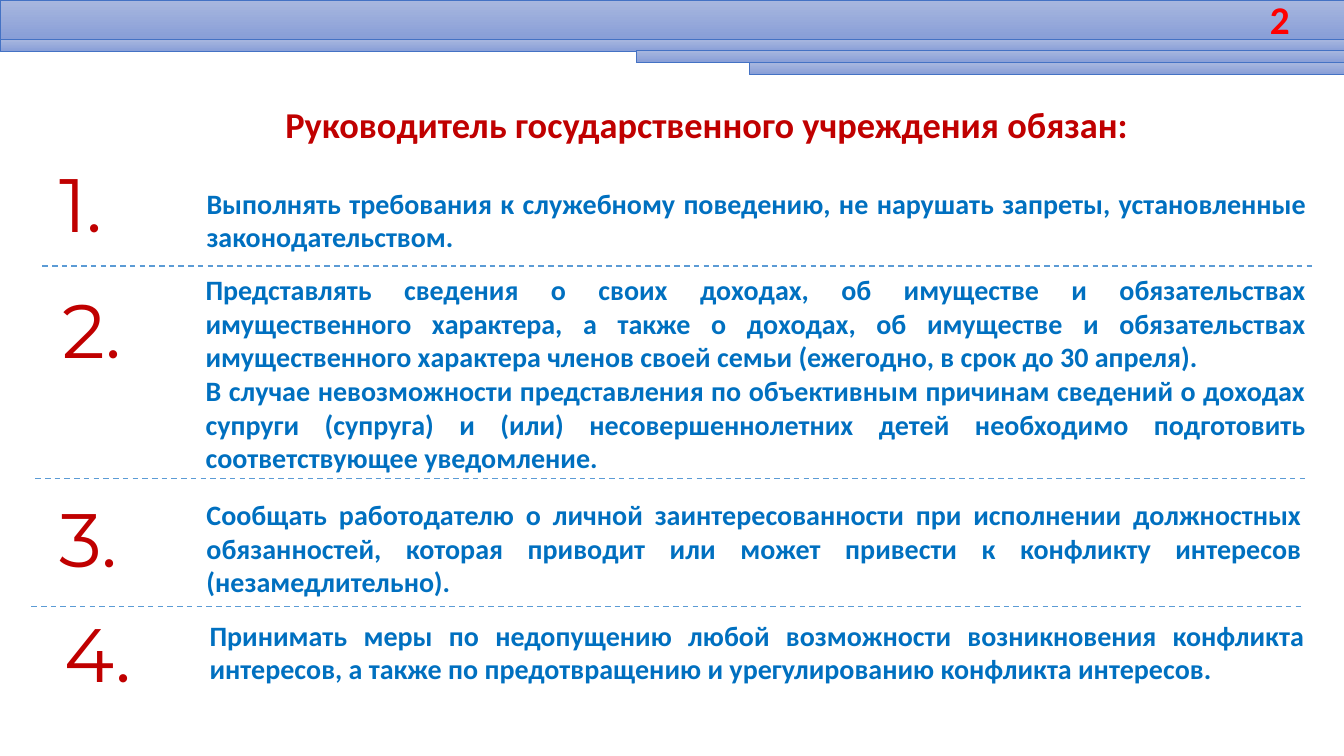
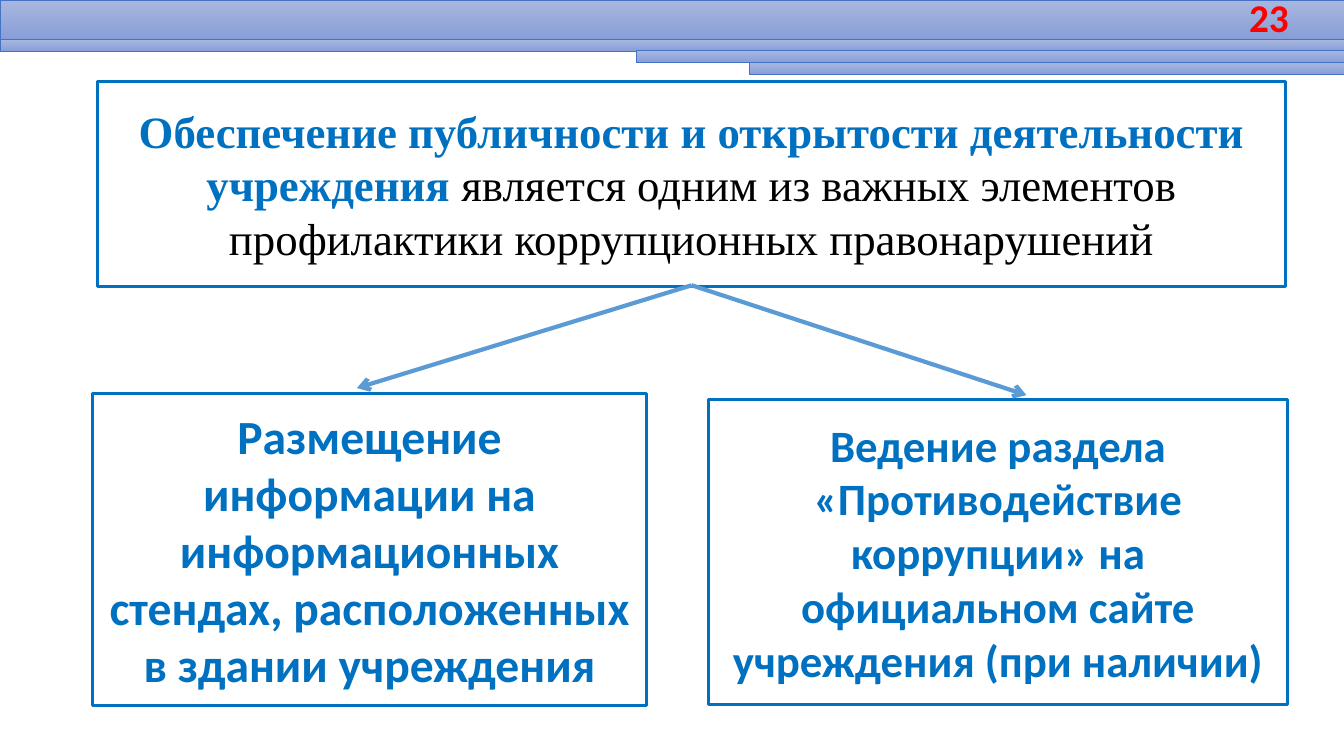
from dataclasses import dataclass

from pptx import Presentation
from pptx.dml.color import RGBColor as RGB
from pptx.enum.dml import MSO_LINE
from pptx.enum.shapes import MSO_CONNECTOR, MSO_SHAPE
from pptx.enum.text import MSO_ANCHOR as ANC, PP_ALIGN as AL
from pptx.oxml.ns import qn
from pptx.util import Inches, Pt
from lxml.etree import SubElement


@dataclass(frozen=True)
class Theme:
    blue: str = "0070C0"
    red: str = "C00000"
    bright: str = "FF0000"
    black: str = "000000"
    sky: str = "5B9BD5"
    edge: str = "4472C4"
    light: str = "A8B7DF"
    deep: str = "889ED7"
    sans: str = "Calibri"
    thin: str = "Montserrat"
    serif: str = "Times New Roman"
    page: int = 28
    title: int = 26
    body: int = 20
    digit: int = 54
    large: int = 34
    box: int = 32


T = Theme()
WIDE, HIGH = 13.33, 7.5
BANDS = [(0, 0, 0.39), (0, 0.39, 0.12), (6.31, 0.5, 0.12), (7.43, 0.62, 0.12)]


class Deck:
    def __init__(self):
        self.prs = Presentation()
        self.prs.slide_width = Inches(WIDE)
        self.prs.slide_height = Inches(HIGH)

    def page(self, num, x, y, w, h):
        """Start a slide with the top bands and its page number."""
        blank = self.prs.slide_layouts[6]
        self.shapes = self.prs.slides.add_slide(blank).shapes
        for left, top, high in BANDS:
            self.band(left, top, WIDE - left, high)
        self.text(x, y, w, h, [[(num, True, T.bright)]], T.page,
                  align=AL.RIGHT, anchor=ANC.MIDDLE)

    def rect(self, x, y, w, h, color, width):
        shape = self.shapes.add_shape(
            MSO_SHAPE.RECTANGLE, *map(Inches, (x, y, w, h)))
        shape.shadow.inherit = False
        shape.line.color.rgb = RGB.from_string(color)
        shape.line.width = Pt(width)
        return shape

    def band(self, x, y, w, h):
        fill = self.rect(x, y, w, h, T.edge, 0.5).fill
        fill.gradient()
        fill.gradient_angle = 270
        for stop, color in zip(fill.gradient_stops, (T.light, T.deep)):
            stop.color.rgb = RGB.from_string(color)

    def put(self, frame, paras, size, font, align, anchor):
        """Fill a frame; each paragraph is a list of (text, bold, colour)."""
        frame.word_wrap = True
        frame.vertical_anchor = anchor
        for i, runs in enumerate(paras):
            para = frame.add_paragraph() if i else frame.paragraphs[0]
            para.alignment = align
            for text, bold, color in runs:
                run = para.add_run()
                run.text = text
                run.font.name = font
                run.font.size = Pt(size)
                run.font.bold = bold
                run.font.color.rgb = RGB.from_string(color)

    def text(self, x, y, w, h, paras, size, font=T.sans, align=AL.LEFT,
             anchor=ANC.TOP):
        area = self.shapes.add_textbox(*map(Inches, (x, y, w, h)))
        self.put(area.text_frame, paras, size, font, align, anchor)

    def box(self, x, y, w, h, runs, size, font=T.sans):
        shape = self.rect(x, y, w, h, T.blue, 2.25)
        shape.fill.background()
        self.put(shape.text_frame, [runs], size, font, AL.CENTER, ANC.MIDDLE)

    def line(self, x1, y1, x2, y2, width, dash=None, arrow=False):
        link = self.shapes.add_connector(
            MSO_CONNECTOR.STRAIGHT, *map(Inches, (x1, y1, x2, y2)))
        link.line.color.rgb = RGB.from_string(T.sky)
        link.line.width = Pt(width)
        if dash:
            link.line.dash_style = dash
        props = link._element.spPr
        if arrow:
            SubElement(props.find(qn("a:ln")), qn("a:tailEnd"), type="arrow")
        SubElement(props, qn("a:effectLst"))


# Left and top of the number; left, top, width and height of the text
DUTIES = [
    ((0.49, 1.51), (1.95, 1.88, 11.11, 0.6), [
        "Выполнять требования к служебному поведению, не нарушать запреты, "
        "установленные законодательством."]),
    ((0.52, 2.76), (1.94, 3.13, 11.11, 1.15), [
        "Представлять сведения о своих доходах, об имуществе и "
        "обязательствах имущественного характера, а также о доходах, об "
        "имуществе и обязательствах имущественного характера членов своей "
        "семьи (ежегодно, в срок до 30 апреля).",
        "В случае невозможности представления по объективным причинам "
        "сведений о доходах супруги (супруга) и (или) несовершеннолетних "
        "детей необходимо подготовить соответствующее уведомление."]),
    ((0.49, 4.83), (1.95, 5, 11.06, 0.87), [
        "Сообщать работодателю о личной заинтересованности при исполнении "
        "должностных обязанностей, которая приводит или может привести к "
        "конфликту интересов (незамедлительно)."]),
    ((0.54, 5.97), (1.98, 6.03, 11.06, 0.87), [
        "Принимать меры по недопущению любой возможности возникновения "
        "конфликта интересов, а также по предотвращению и урегулированию "
        "конфликта интересов."]),
]
RULES = [(0.42, 2.64), (0.35, 4.75), (0.31, 6.02)]


def duties(deck):
    deck.page("2", 12, 0, 0.89, 0.38)
    title = "Руководитель государственного учреждения обязан:"
    deck.text(0.95, 0.96, 12.13, 0.54, [[(title, True, T.red)]], T.title,
              align=AL.CENTER)
    for num, (spot, area, paras) in enumerate(DUTIES, 1):
        deck.text(*spot, 1.25, 1.01, [[(f"{num}.", False, T.red)]],
                  T.digit, T.thin)
        deck.text(*area, [[(text, True, T.blue)] for text in paras], T.body,
                  align=AL.JUSTIFY, anchor=ANC.MIDDLE)
    for x, y in RULES:
        deck.line(x, y, x + 12.61, y, 1, dash=MSO_LINE.DASH)


def openness(deck):
    deck.page("23", 11.63, -0.05, 1.25, 0.44)
    deck.box(0.92, 3.9, 5.49, 3.1, [(
        "Размещение информации на информационных стендах, расположенных "
        "в здании учреждения", True, T.blue)], T.large)
    deck.box(7.03, 3.96, 5.74, 3.03, [(
        "Ведение раздела «Противодействие коррупции» на официальном сайте "
        "учреждения (при наличии)", True, T.blue)], T.box)
    deck.box(0.97, 0.81, 11.78, 2.03, [
        ("Обеспечение публичности и открытости деятельности учреждения ",
         True, T.blue),
        ("является одним из важных элементов профилактики коррупционных "
         "правонарушений", False, T.black)], T.box, T.serif)
    for x, y in ((3.54, 3.85), (10.18, 3.92)):
        deck.line(6.86, 2.83, x, y, 3, arrow=True)


def main():
    deck = Deck()
    duties(deck)
    openness(deck)
    deck.prs.save("out.pptx")


if __name__ == "__main__":
    main()
